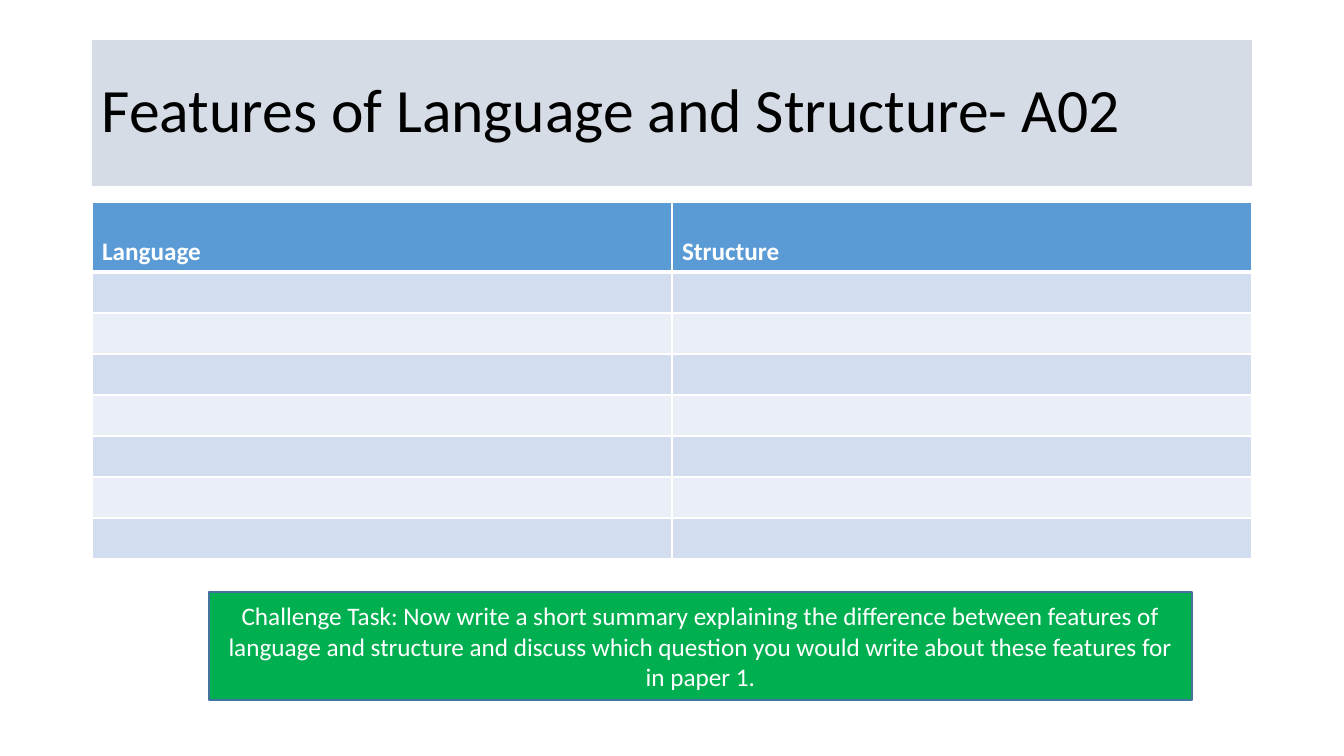
import dataclasses

import lxml.etree
import pptx
import pptx.dml.color
import pptx.enum.shapes
import pptx.enum.text
import pptx.oxml
import pptx.oxml.ns
import pptx.util

SLIDE_WIDTH, SLIDE_HEIGHT = 1344, 756
EMU_PER_PX = 12192000 / SLIDE_WIDTH
ANCHOR = pptx.enum.text.MSO_ANCHOR
ALIGN = pptx.enum.text.PP_ALIGN


@dataclasses.dataclass(frozen=True)
class Theme:
    """Colours and type sizes of the slide."""
    font: str = "Calibri"
    title_size: int = 44
    body_size: int = 18
    dark: str = "000000"
    light: str = "FFFFFF"
    title_fill: str = "D6DCE5"
    header_fill: str = "5B9BD5"
    bands: tuple = ("D2DEEF", "EAEFF7")
    task_fill: str = "00B050"
    task_line: str = "43739E"


THEME = Theme()


def px(length):
    """Turn pixels into EMU."""
    return pptx.util.Emu(round(length * EMU_PER_PX))


def rgb(colour):
    """Turn a hex string into a colour."""
    return pptx.dml.color.RGBColor.from_string(colour)


def write(frame, text, size=THEME.body_size, colour=THEME.light, bold=False,
          align=ALIGN.LEFT, spacing=1.0):
    """Write one formatted paragraph into a text frame."""
    frame.word_wrap = True
    paragraph = frame.paragraphs[0]
    paragraph.alignment = align
    paragraph.line_spacing = spacing
    run = paragraph.add_run()
    run.text = text
    run.font.name = THEME.font
    run.font.size = pptx.util.Pt(size)
    run.font.bold = bold
    run.font.color.rgb = rgb(colour)


def add_panel(slide, box, text, fill, line=None, **text_format):
    """Place a filled rectangle with vertically centred text."""
    panel = slide.shapes.add_shape(
        pptx.enum.shapes.MSO_SHAPE.RECTANGLE, *map(px, box))
    panel.shadow.inherit = False
    panel.fill.solid()
    panel.fill.fore_color.rgb = rgb(fill)
    if line:
        panel.line.color.rgb = rgb(line)
        panel.line.width = pptx.util.Pt(1)
    else:
        panel.line.fill.background()
    panel.text_frame.vertical_anchor = ANCHOR.MIDDLE
    write(panel.text_frame, text, **text_format)


def style_cell(cell, fill, bottom_width):
    """Give a cell its white borders and its fill."""
    properties = cell._tc.get_or_add_tcPr()
    widths = {"lnL": 1, "lnR": 1, "lnT": 1, "lnB": bottom_width}
    for side, width in widths.items():
        border = lxml.etree.SubElement(
            properties, pptx.oxml.ns.qn(f"a:{side}"), w=str(pptx.util.Pt(width)))
        solid = lxml.etree.SubElement(border, pptx.oxml.ns.qn("a:solidFill"))
        lxml.etree.SubElement(solid, pptx.oxml.ns.qn("a:srgbClr"), val=THEME.light)
    cell.fill.solid()
    cell.fill.fore_color.rgb = rgb(fill)


def add_feature_table(slide, box, headings, empty_rows, row_height):
    """Place headings over banded empty rows for the answers."""
    left, top, width, height = box
    table = slide.shapes.add_table(
        empty_rows + 1, len(headings), *map(px, box)).table
    for column in table.columns:
        column.width = px(width / len(headings))
    for index, row in enumerate(table.rows):
        is_header = index == 0
        row.height = px(height - empty_rows * row_height if is_header else row_height)
        fill = THEME.header_fill if is_header else THEME.bands[(index - 1) % 2]
        for cell, heading in zip(row.cells, headings):
            style_cell(cell, fill, 3 if is_header else 1)
            if is_header:
                cell.vertical_anchor = ANCHOR.BOTTOM
                write(cell.text_frame, heading, bold=True)
            else:
                cell.text_frame.paragraphs[0].font.size = pptx.util.Pt(THEME.body_size)


def main():
    """Build and save the slide."""
    presentation = pptx.Presentation()
    presentation.slide_width = px(SLIDE_WIDTH)
    presentation.slide_height = px(SLIDE_HEIGHT)
    slide = presentation.slides.add_slide(presentation.slide_layouts[6])
    add_panel(slide, (92, 40, 1160, 146), "Features of Language and Structure- A02",
              THEME.title_fill, size=THEME.title_size, colour=THEME.dark, spacing=0.9)
    add_feature_table(slide, (92, 202, 1160, 357), ("Language", "Structure"),
                      empty_rows=7, row_height=41)
    add_panel(slide, (209, 592, 983, 108),
              "Challenge Task: Now write a short summary explaining the difference "
              "between features of language and structure and discuss which question "
              "you would write about these features for in paper 1.",
              THEME.task_fill, line=THEME.task_line, align=ALIGN.CENTER)
    presentation.save("out.pptx")


if __name__ == "__main__":
    main()
